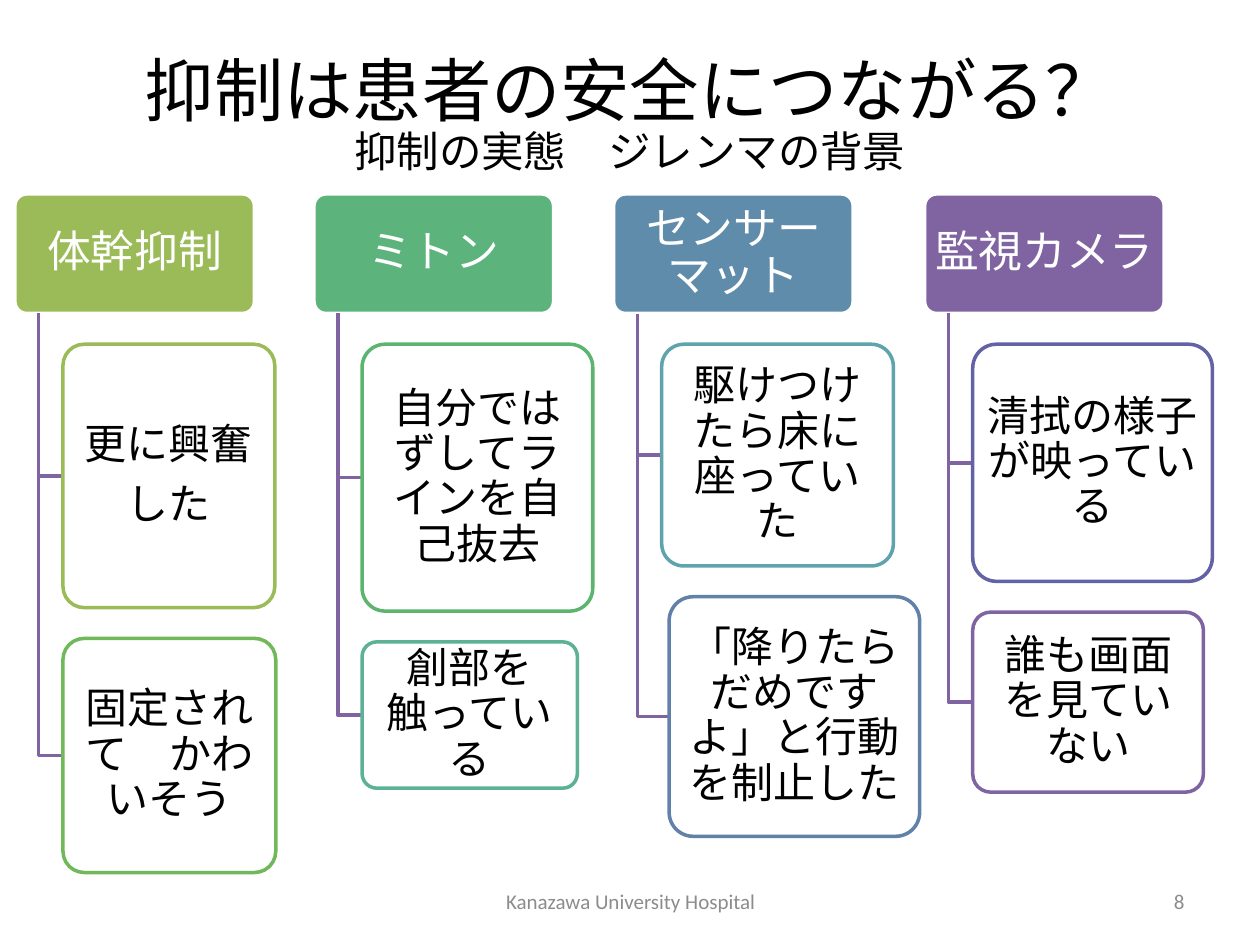
from lxml.etree import SubElement
from pptx import Presentation
from pptx.dml.color import RGBColor
from pptx.enum.shapes import MSO_SHAPE
from pptx.enum.text import MSO_ANCHOR, PP_ALIGN
from pptx.oxml.ns import qn
from pptx.util import Cm, Pt

BLACK = RGBColor(0x00, 0x00, 0x00)
WHITE = RGBColor(0xFF, 0xFF, 0xFF)
GRAY = RGBColor(0x8C, 0x8C, 0x8C)
OLIVE = RGBColor(0x9B, 0xBB, 0x59)
LEAF = RGBColor(0x70, 0xB8, 0x5A)
GREEN = RGBColor(0x5C, 0xB3, 0x7C)
MEADOW = RGBColor(0x5C, 0xB4, 0x6F)
JADE = RGBColor(0x5D, 0xB1, 0x95)
BLUE = RGBColor(0x60, 0x8C, 0xAB)
TEAL = RGBColor(0x5F, 0xA4, 0xAD)
STEEL = RGBColor(0x61, 0x81, 0xA9)
INDIGO = RGBColor(0x63, 0x62, 0xA6)
PURPLE = RGBColor(0x80, 0x64, 0xA2)

# Hierarchy layout, in cm
HEAD_TOP, HEAD_W, HEAD_H = 3.91, 4.83, 2.41
HEAD_BOTTOM = HEAD_TOP + HEAD_H
TRUNK, INDENT, GAP = 0.48, 0.97, 0.62

# Left, heading, colour, then cards: text, width, height, colour, indent
COLUMNS = [
    (0.3, "体幹抑制", OLIVE, [
        ("更に興奮\nした", 4.27, 5.31, OLIVE, INDENT),
        ("固定されて　かわいそう", 4.29, 4.72, LEAF, INDENT)]),
    (6.33, "ミトン", GREEN, [
        ("自分ではずしてラインを自己抜去", 4.65, 5.38, MEADOW, INDENT),
        ("創部を触っている", 4.34, 2.95, JADE, INDENT)]),
    (12.37, "センサーマット", BLUE, [
        ("駆けつけたら床に座っていた", 4.67, 4.47, TEAL, INDENT),
        ("「降りたらだめですよ」と行動を制止した", 5.05, 4.83, STEEL, 1.12)]),
    (18.64, "監視カメラ", PURPLE, [
        ("清拭の様子が映っている", 4.83, 4.78, INDIGO, INDENT),
        ("誰も画面を見ていない", 4.65, 3.63, PURPLE, INDENT)]),
]


class Deck:
    font = "Calibri"
    line_width = Pt(2)

    def __init__(self, width, height):
        self.prs = Presentation()
        self.prs.slide_width, self.prs.slide_height = Cm(width), Cm(height)
        self.s = self.prs.slides.add_slide(self.prs.slide_layouts[6])

    def style(self, p, size, color, align=PP_ALIGN.CENTER):
        p.alignment = align
        p.font.name, p.font.size = self.font, Pt(size)
        p.font.color.rgb = color

    def text_box(self, x, y, w, h):
        tf = self.s.shapes.add_textbox(Cm(x), Cm(y), Cm(w), Cm(h)).text_frame
        tf.word_wrap = True
        tf.vertical_anchor = MSO_ANCHOR.MIDDLE
        return tf

    def title(self, x, y, w, h, main, sub):
        p = self.text_box(x, y, w, h).paragraphs[0]
        self.style(p, 39.6, BLACK)
        p.line_spacing = 0.9
        p.add_run().text = main
        p.add_line_break()
        r = p.add_run()
        r.text = sub
        r.font.size = Pt(24.3)

    def label(self, x, y, w, h, text, align):
        p = self.text_box(x, y, w, h).paragraphs[0]
        p.text = text
        self.style(p, 12, GRAY, align)

    def card(self, x, y, w, h, text, size, color, fill, line, alpha=None):
        sp = self.s.shapes.add_shape(
            MSO_SHAPE.ROUNDED_RECTANGLE, Cm(x), Cm(y), Cm(w), Cm(h))
        sp.adjustments[0] = 0.1
        sp.shadow.inherit = False
        sp.fill.solid()
        sp.fill.fore_color.rgb = fill
        if alpha:
            clr = sp.fill._xPr.find(".//" + qn("a:srgbClr"))
            SubElement(clr, qn("a:alpha")).set("val", str(alpha * 1000))
        sp.line.color.rgb, sp.line.width = line, self.line_width
        tf = sp.text_frame
        tf.word_wrap = True
        tf.vertical_anchor = MSO_ANCHOR.MIDDLE
        tf.margin_left = tf.margin_right = Cm(0.13)
        tf.margin_top = tf.margin_bottom = Cm(0.08)
        tf.text = text
        for p in tf.paragraphs:
            self.style(p, size, color)
            p.line_spacing = 0.9
            p.space_after = Pt(0.35 * size)

    def elbow(self, x, top, end_x, end_y):
        fb = self.s.shapes.build_freeform(Cm(x), Cm(top))
        fb.add_line_segments(
            [(Cm(x), Cm(end_y)), (Cm(end_x), Cm(end_y))], close=False)
        sp = fb.convert_to_shape()
        sp.shadow.inherit = False
        sp.fill.background()
        sp.line.color.rgb, sp.line.width = PURPLE, self.line_width


def main():
    deck = Deck(25.4, 19.05)

    # Title
    deck.title(1.27, 0.76, 22.86, 3.18,
               "抑制は患者の安全につながる？", "抑制の実態　ジレンマの背景")

    # Headings with their cards
    for x, heading, color, cards in COLUMNS:
        deck.card(x, HEAD_TOP, HEAD_W, HEAD_H, heading, 25, WHITE, color, WHITE)
        y = HEAD_BOTTOM + GAP
        for text, w, h, line, indent in cards:
            deck.elbow(x + TRUNK, HEAD_BOTTOM, x + indent, y + h / 2)
            deck.card(x + indent, y, w, h, text, 24, BLACK, WHITE, line, 90)
            y += h + GAP

    # Footer
    deck.label(18.21, 17.65, 5.92, 1.02, "8", PP_ALIGN.RIGHT)
    deck.label(8.69, 17.65, 8.05, 1.02, "Kanazawa University Hospital",
               PP_ALIGN.CENTER)

    deck.prs.save("out.pptx")


if __name__ == "__main__":
    main()
